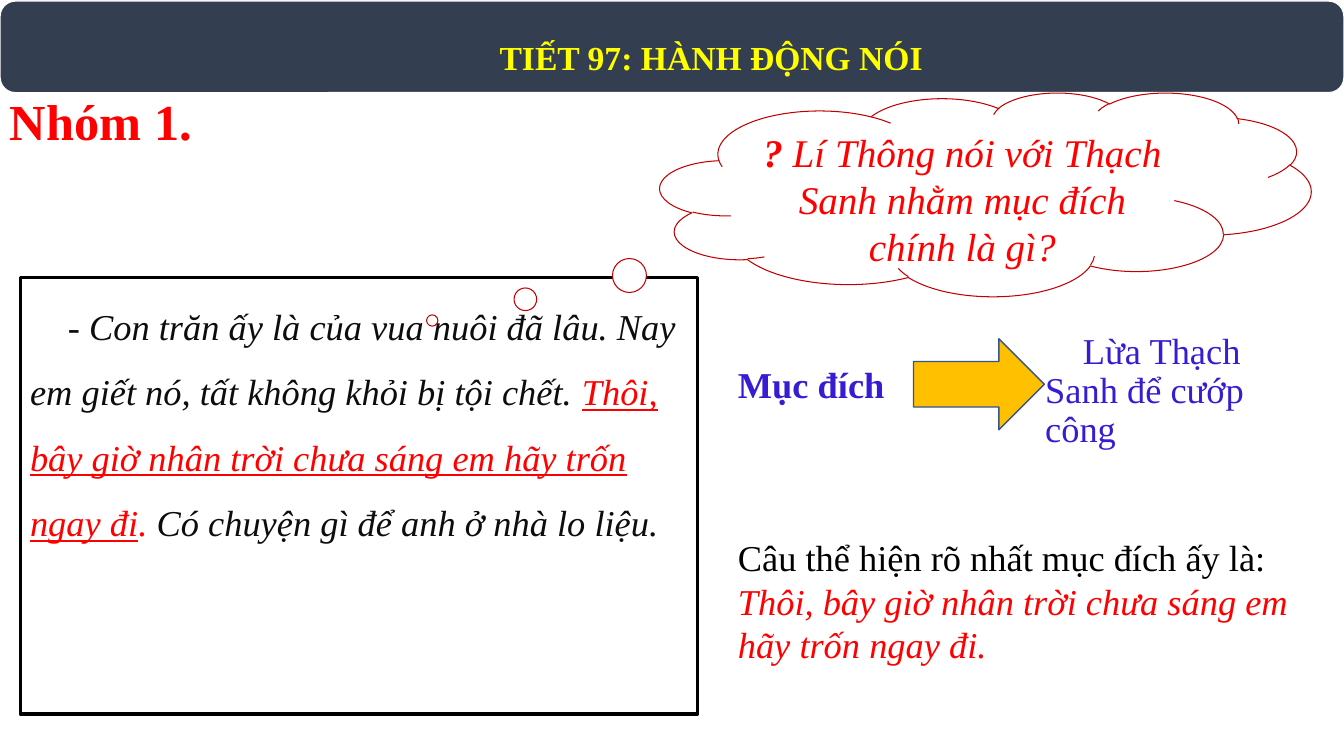
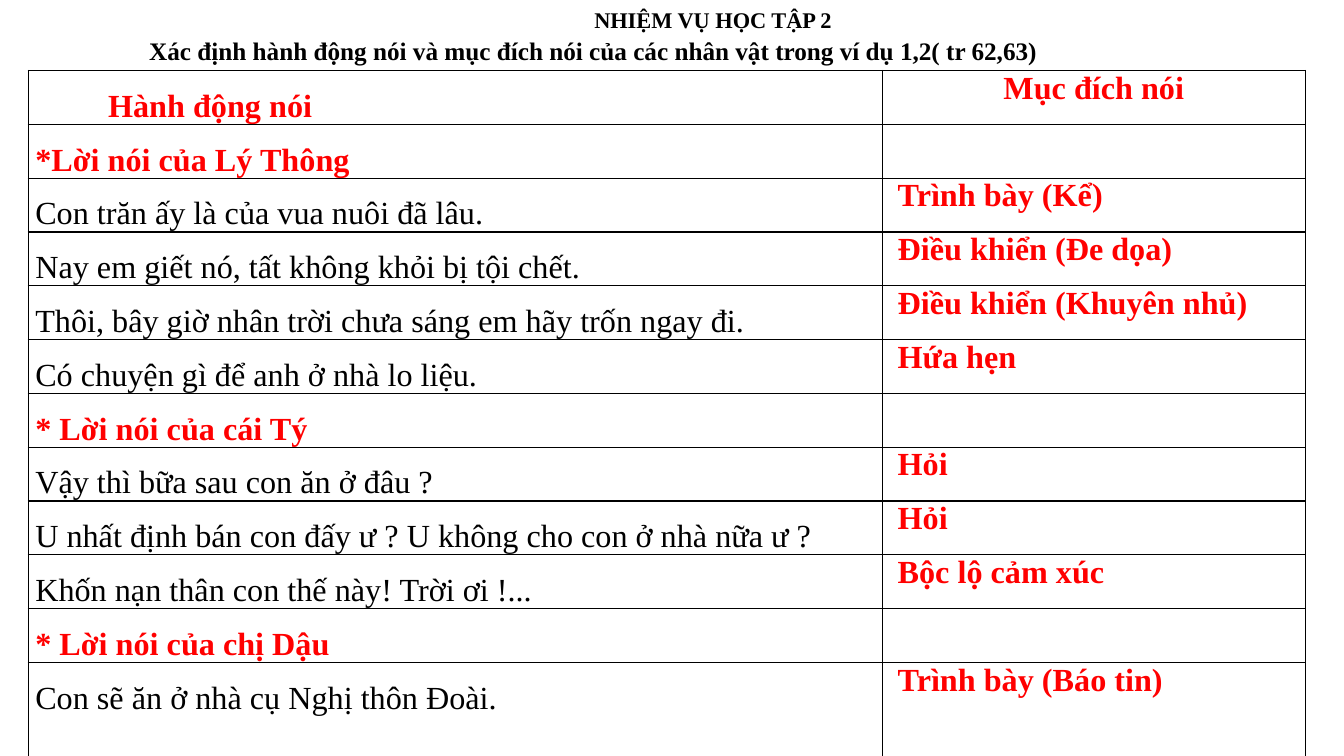
from dataclasses import dataclass

from pptx import Presentation
from pptx.dml.color import RGBColor
from pptx.enum.shapes import MSO_SHAPE
from pptx.enum.text import MSO_ANCHOR, PP_ALIGN
from pptx.oxml import parse_xml
from pptx.oxml.ns import nsdecls
from pptx.util import Pt

FONT = "Times New Roman"
BLACK = RGBColor(0x00, 0x00, 0x00)
WHITE = RGBColor(0xFF, 0xFF, 0xFF)
INK = RGBColor(0x0D, 0x0D, 0x0D)
SLATE = RGBColor(0x33, 0x3F, 0x50)
YELLOW = RGBColor(0xFF, 0xFF, 0x00)
RED = RGBColor(0xFF, 0x00, 0x00)
DARK_RED = RGBColor(0xC0, 0x00, 0x00)
VIOLET = RGBColor(0x36, 0x1C, 0xD2)
AMBER = RGBColor(0xFF, 0xC0, 0x00)
ARROW_EDGE = RGBColor(0x32, 0x54, 0x91)


@dataclass(frozen=True)
class Run:
    text: str
    size: float
    color: RGBColor
    bold: bool = False
    italic: bool = False
    underline: bool = False


@dataclass(frozen=True)
class Para:
    runs: tuple[Run, ...]
    align: PP_ALIGN = PP_ALIGN.LEFT
    spacing: float | Pt = 1.0
    before: float = 0
    left: float = 0
    first_line: float = 0


@dataclass(frozen=True)
class Box:
    left: float
    top: float
    width: float
    height: float

    def lengths(self) -> tuple[Pt, ...]:
        return Pt(self.left), Pt(self.top), Pt(self.width), Pt(self.height)


@dataclass(frozen=True)
class Outline:
    color: RGBColor
    width: float


@dataclass(frozen=True)
class Speech:
    words: str
    purpose: str = ""


def write(frame, paras: tuple[Para, ...]) -> None:
    for index, para in enumerate(paras):
        line = frame.add_paragraph() if index else frame.paragraphs[0]
        properties = line._p.get_or_add_pPr()
        properties.set("marL", str(Pt(para.left)))
        properties.set("indent", str(Pt(para.first_line)))
        formats = {"alignment": para.align, "line_spacing": para.spacing,
                   "space_before": Pt(para.before)}
        for name, value in formats.items():
            setattr(line, name, value)
        for part in para.runs:
            run = line.add_run()
            run.text = part.text
            formats = {"name": FONT, "size": Pt(part.size), "bold": part.bold,
                       "italic": part.italic, "underline": part.underline}
            for name, value in formats.items():
                setattr(run.font, name, value)
            run.font.color.rgb = part.color


def add_text(slide, box: Box, *paras: Para, wrap: bool = True,
             anchor: MSO_ANCHOR = MSO_ANCHOR.TOP) -> None:
    frame = slide.shapes.add_textbox(*box.lengths()).text_frame
    frame.word_wrap = wrap
    frame.vertical_anchor = anchor
    write(frame, paras)


def add_figure(slide, kind: MSO_SHAPE, box: Box, fill: RGBColor | None,
               outline: Outline | None, *paras: Para, top_inset: float = 3.6,
               adjust: tuple[float, ...] = ()) -> None:
    shape = slide.shapes.add_shape(kind, *box.lengths())
    shape.shadow.inherit = False
    if fill is None:
        shape.fill.background()
    else:
        shape.fill.solid()
        shape.fill.fore_color.rgb = fill
    if outline is None:
        shape.line.fill.background()
    else:
        shape.line.color.rgb = outline.color
        shape.line.width = Pt(outline.width)
    for index, value in enumerate(adjust):
        shape.adjustments[index] = value
    frame = shape.text_frame
    frame.word_wrap = True
    frame.vertical_anchor = MSO_ANCHOR.TOP
    frame.margin_top = Pt(top_inset)
    write(frame, paras)


def fill_cell(cell, para: Para | None) -> None:
    margins = {"margin_left": Pt(5), "margin_right": Pt(5),
               "margin_top": Pt(0), "margin_bottom": Pt(0)}
    for name, value in margins.items():
        setattr(cell, name, value)
    if para:
        write(cell.text_frame, (para,))
    properties = cell._tc.get_or_add_tcPr()
    for side in ("lnL", "lnR", "lnT", "lnB"):
        properties.append(parse_xml(
            f'<a:{side} {nsdecls("a")} w="{Pt(1)}"><a:solidFill>'
            f'<a:srgbClr val="{BLACK}"/></a:solidFill></a:{side}>'))
    cell.fill.background()


def build_group_slide(slide) -> None:
    # Title band
    add_figure(slide, MSO_SHAPE.ROUNDED_RECTANGLE, Box(0, 0.7, 960, 65.5),
               SLATE, Outline(WHITE, 1))
    add_text(slide, Box(76, 24.5, 864, 36),
             Para((Run("TIẾT 97: HÀNH ĐỘNG NÓI", 24, YELLOW, bold=True),),
                  PP_ALIGN.CENTER, 0.9), anchor=MSO_ANCHOR.MIDDLE)

    # Group panel
    add_figure(slide, MSO_SHAPE.RECTANGLE, Box(0, 66.2, 953.3, 462.2), WHITE, None,
               Para((Run("Nhóm 1.", 36, RED, bold=True),), spacing=0.9),
               top_inset=2.8)

    # Quoted speech
    add_figure(
        slide, MSO_SHAPE.RECTANGLE, Box(14.4, 198, 484, 312), None, Outline(BLACK, 2.25),
        Para((
            Run("- ", 26, INK),
            Run("Con trăn ấy là của vua nuôi đã lâu. Nay em giết nó, "
                "tất không khỏi bị tội chết. ", 26, INK, italic=True),
            Run("Thôi, bây giờ nhân trời chưa sáng em hãy trốn ngay đi",
                26, RED, italic=True, underline=True),
            Run(". ", 26, RED, italic=True),
            Run("Có chuyện gì để anh ở nhà lo liệu.", 26, INK, italic=True),
        ), spacing=1.5, first_line=27))

    # Purpose and answer
    add_text(slide, Box(739.5, 234.2, 196.5, 120),
             Para((Run("Lừa Thạch Sanh để cướp công", 26, VIOLET),),
                  spacing=0.9, first_line=27))
    add_figure(slide, MSO_SHAPE.RIGHT_ARROW, Box(652.5, 242, 93.5, 65),
               AMBER, Outline(ARROW_EDGE, 1))
    add_text(slide, Box(520, 255, 120, 39),
             Para((Run("Mục đích", 26, VIOLET, bold=True),)), wrap=False)

    # Question cloud
    add_figure(
        slide, MSO_SHAPE.CLOUD_CALLOUT, Box(471.5, 66, 465, 145.5), WHITE,
        Outline(DARK_RED, 0.75),
        Para((Run("? ", 28, RED, bold=True, italic=True),
              Run("Lí Thông nói với Thạch Sanh nhằm mục đích chính là gì?",
                  28, RED, italic=True)), PP_ALIGN.CENTER),
        adjust=(-0.85, 0.62))

    # Key sentence
    add_text(slide, Box(520, 378.7, 417.5, 101.5),
             Para((Run("Câu thể hiện rõ nhất mục đích ấy là: ", 26, BLACK),
                   Run("Thôi, bây giờ nhân trời chưa sáng em hãy trốn ngay đi.",
                       26, RED, italic=True))))


SPEECHES = (
    Speech("*Lời nói của Lý Thông"),
    Speech("Con trăn ấy là của vua nuôi đã lâu.", "Trình bày (Kể)"),
    Speech("Nay em giết nó, tất không khỏi bị tội chết.", "Điều khiển (Đe dọa)"),
    Speech("Thôi, bây giờ nhân trời chưa sáng em hãy trốn ngay đi.",
           "Điều khiển (Khuyên nhủ)"),
    Speech("Có chuyện gì để anh ở nhà lo liệu.", "Hứa hẹn"),
    Speech("* Lời nói của cái Tý"),
    Speech("Vậy thì bữa sau con ăn ở đâu ?", "Hỏi"),
    Speech("U nhất định bán con đấy ư ? U không cho con ở nhà nữa ư ?", "Hỏi"),
    Speech("Khốn nạn thân con thế này! Trời ơi !...", "Bộc lộ cảm xúc"),
    Speech("* Lời nói của chị Dậu"),
    Speech("Con sẽ ăn ở nhà cụ Nghị thôn Đoài.", "Trình bày (Báo tin)"),
)
ROW_HEIGHT, LAST_ROW_HEIGHT = 38.4, 73.4
COLUMN_WIDTHS = (610, 302.4)


def build_task_slide(slide) -> None:
    # Speech acts and their purposes
    row_count = len(SPEECHES) + 1
    height = ROW_HEIGHT * len(SPEECHES) + LAST_ROW_HEIGHT
    frame = slide.shapes.add_table(
        row_count, len(COLUMN_WIDTHS),
        *Box(20.2, 50.4, sum(COLUMN_WIDTHS), height).lengths())
    table = frame.table
    table.first_row = table.horz_banding = False
    for column, width in zip(table.columns, COLUMN_WIDTHS):
        column.width = Pt(width)
    for row in table.rows:
        row.height = Pt(ROW_HEIGHT)
    table.rows[row_count - 1].height = Pt(LAST_ROW_HEIGHT)

    row_line = Pt(ROW_HEIGHT)
    fill_cell(table.cell(0, 0), Para((Run("Hành động nói", 23, RED, bold=True),),
                                     spacing=row_line, left=52))
    fill_cell(table.cell(0, 1), Para((Run("Mục đích nói", 23, RED, bold=True),),
                                     PP_ALIGN.CENTER))
    for index, speech in enumerate(SPEECHES, start=1):
        is_speaker = not speech.purpose
        words = Run(speech.words, 23, RED if is_speaker else BLACK, bold=is_speaker)
        purpose = Para((Run(speech.purpose, 23, RED, bold=True),), left=6)
        fill_cell(table.cell(index, 0), Para((words,), spacing=row_line))
        fill_cell(table.cell(index, 1), None if is_speaker else purpose)

    # Task heading
    add_text(slide, Box(99.4, 0.5, 780, 48),
             Para((Run("NHIỆM VỤ HỌC TẬP 2", 16, BLACK, bold=True),), left=318),
             Para((Run("Xác định hành động nói và mục đích nói của các nhân vật "
                       "trong ví dụ 1,2( tr 62,63)", 18, BLACK, bold=True),), before=2))


def main() -> None:
    deck = Presentation()
    deck.slide_width, deck.slide_height = Pt(960), Pt(540)
    blank = deck.slide_layouts[6]
    for build in (build_group_slide, build_task_slide):
        build(deck.slides.add_slide(blank))
    deck.save("out.pptx")


if __name__ == "__main__":
    main()
